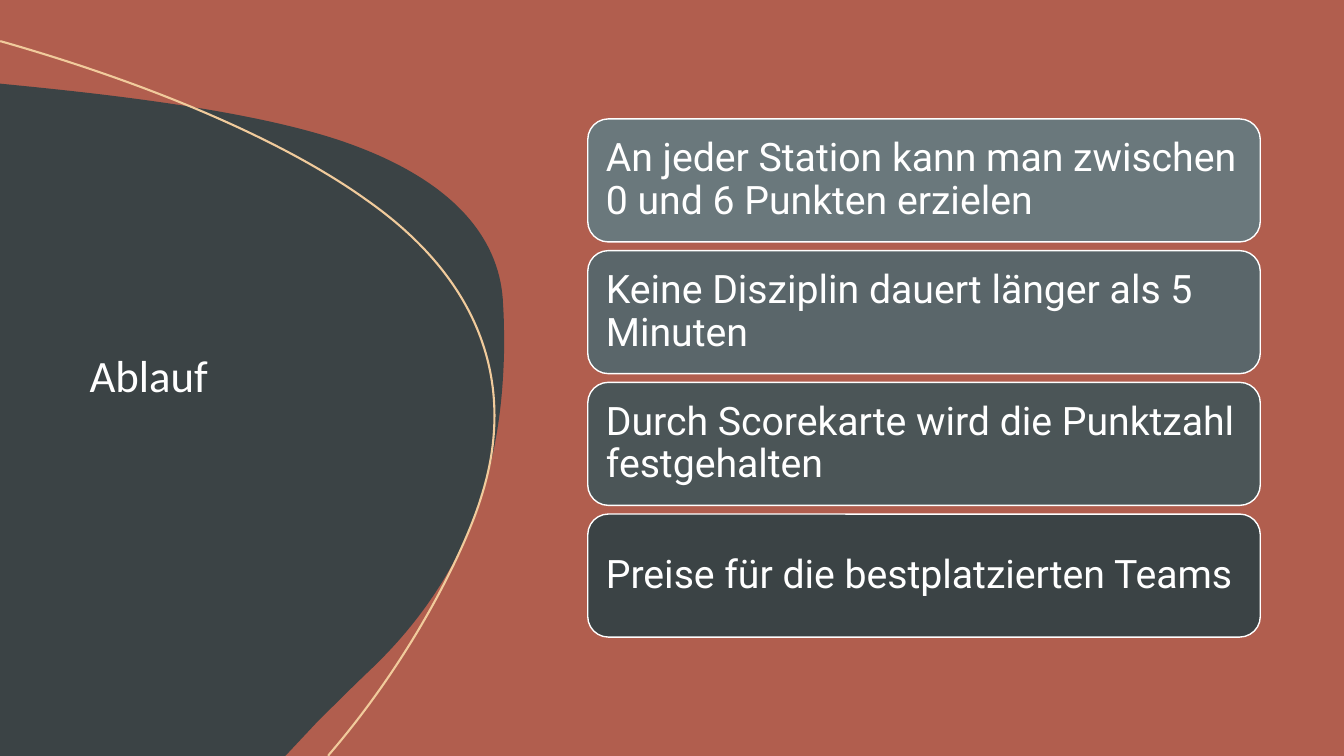
"""Build the "Ablauf" slide with a curved title panel and four stacked statements."""
from lxml.etree import SubElement
from pptx import Presentation
from pptx.dml.color import RGBColor
from pptx.enum.shapes import MSO_SHAPE as SHAPE
from pptx.enum.text import MSO_ANCHOR as ANCHOR, PP_ALIGN as ALIGN
from pptx.oxml.ns import qn
from pptx.util import Inches, Pt

RUST = RGBColor(0xB1, 0x5E, 0x4E)
SLATE = RGBColor(0x3B, 0x43, 0x45)
SAND = RGBColor(0xF1, 0xCB, 0x9C)
WHITE = RGBColor(0xFF, 0xFF, 0xFF)

TITLE = "Ablauf"
STATEMENTS = [
    ("An jeder Station kann man zwischen 0 und 6 Punkten erzielen", RGBColor(0x6A, 0x78, 0x7C)),
    ("Keine Disziplin dauert länger als 5 Minuten", RGBColor(0x5A, 0x66, 0x6A)),
    ("Durch Scorekarte wird die Punktzahl festgehalten", RGBColor(0x4B, 0x55, 0x57)),
    ("Preise für die bestplatzierten Teams", SLATE),
]
SLIDE_WIDTH, SLIDE_HEIGHT = 13.33, 7.5
BOX_LEFT, BOX_WIDTH, BOX_HEIGHT = 5.83, 6.67, 1.22
STACK_TOP, STACK_BOTTOM = 1.18, 6.32

PANEL_WIDTH = 5
PANEL = [
    (5, 3.47),
    (4.98, 4.53, 4.72, 5.64, 3.69, 6.63),
    (3.5, 6.81, 3.31, 7, 3.13, 7.18),
    (2.83, 7.5),
    (0, 7.5),
    (0, 0.83),
    (0.3, 0.86),
    (1.49, 0.98, 2.62, 1.14, 3.39, 1.4),
    (4.59, 1.81, 4.97, 2.44, 4.99, 3.02),
    (5, 3.17, 5, 3.32, 5, 3.47),
]
ARC_WIDTH = 4.91
ARC = [
    (0, 0.41),
    (0.01, 0.41),
    (1.52, 0.84, 2.82, 1.4, 3.63, 1.98),
    (4.86, 2.84, 5.1, 3.92, 4.77, 4.94),
    (4.63, 5.4, 4.13, 6.48, 3.26, 7.49),
    (3.26, 7.5),
]


def add_outline(slide, outline, width, close):
    """Add a freeform whose six-number steps are cubic curves."""
    ends = [(Inches(step[-2]), Inches(step[-1])) for step in outline]
    builder = slide.shapes.build_freeform(*ends[0], scale=1.0)
    builder.add_line_segments(ends[1:], close=close)
    sp = builder.convert_to_shape()
    sp.shadow.inherit = False
    sp.width = Inches(width)
    track = next(sp._element.iter(qn("a:path")))
    track.set("w", str(sp.width))
    for segment, step in zip(track.findall(qn("a:lnTo")), outline[1:]):
        if len(step) == 6:
            segment.tag = qn("a:cubicBezTo")
            segment.clear()
            for x, y in zip(step[::2], step[1::2]):
                pt = SubElement(segment, qn("a:pt"))
                pt.set("x", str(Inches(x) - sp.left))
                pt.set("y", str(Inches(y) - sp.top))
    return sp


def add_box(slide, preset, left, top, width, height, color):
    """Add a filled preset shape without shadow or line."""
    sp = slide.shapes.add_shape(
        preset, Inches(left), Inches(top), Inches(width), Inches(height)
    )
    sp.shadow.inherit = False
    sp.fill.solid()
    sp.fill.fore_color.rgb = color
    sp.line.fill.background()
    return sp


def add_text(sp, text, font, size):
    """Write one left-aligned white paragraph, centred vertically."""
    tf = sp.text_frame
    tf.word_wrap = True
    tf.vertical_anchor = ANCHOR.MIDDLE
    p = tf.paragraphs[0]
    p.alignment = ALIGN.LEFT
    p.line_spacing = 0.9
    r = p.add_run()
    r.text = text
    r.font.name = font
    r.font.size = Pt(size)
    r.font.color.rgb = WHITE
    return tf


def add_statement(slide, top, text, color):
    """Add one rounded box of the stack."""
    sp = add_box(slide, SHAPE.ROUNDED_RECTANGLE, BOX_LEFT, top, BOX_WIDTH, BOX_HEIGHT, color)
    sp.line.color.rgb = WHITE
    sp.line.width = Pt(1)
    tf = add_text(sp, text, "Roboto", 28)
    tf.margin_left = tf.margin_right = Inches(0.12)
    tf.margin_top = tf.margin_bottom = Inches(0.12)


def main():
    """Create and save the slide."""
    prs = Presentation()
    prs.slide_width, prs.slide_height = Inches(SLIDE_WIDTH), Inches(SLIDE_HEIGHT)
    slide = prs.slides.add_slide(prs.slide_layouts[6])
    slide.background.fill.solid()
    slide.background.fill.fore_color.rgb = RUST
    add_box(slide, SHAPE.RECTANGLE, 0, 0, SLIDE_WIDTH, SLIDE_HEIGHT, RUST)

    panel = add_outline(slide, PANEL, PANEL_WIDTH, close=True)
    panel.fill.solid()
    panel.fill.fore_color.rgb = SLATE
    panel.line.fill.background()

    arc = add_outline(slide, ARC, ARC_WIDTH, close=False)
    arc.fill.background()
    arc.line.color.rgb = SAND
    arc.line.width = Pt(1.5)

    title = slide.shapes.add_textbox(Inches(0.79), Inches(2.5), Inches(3.33), Inches(2.5))
    add_text(title, TITLE, "Calibri", 32)

    pitch = (STACK_BOTTOM - STACK_TOP - BOX_HEIGHT) / (len(STATEMENTS) - 1)
    for index, (text, color) in enumerate(STATEMENTS):
        add_statement(slide, STACK_TOP + index * pitch, text, color)

    prs.save("out.pptx")


if __name__ == "__main__":
    main()
